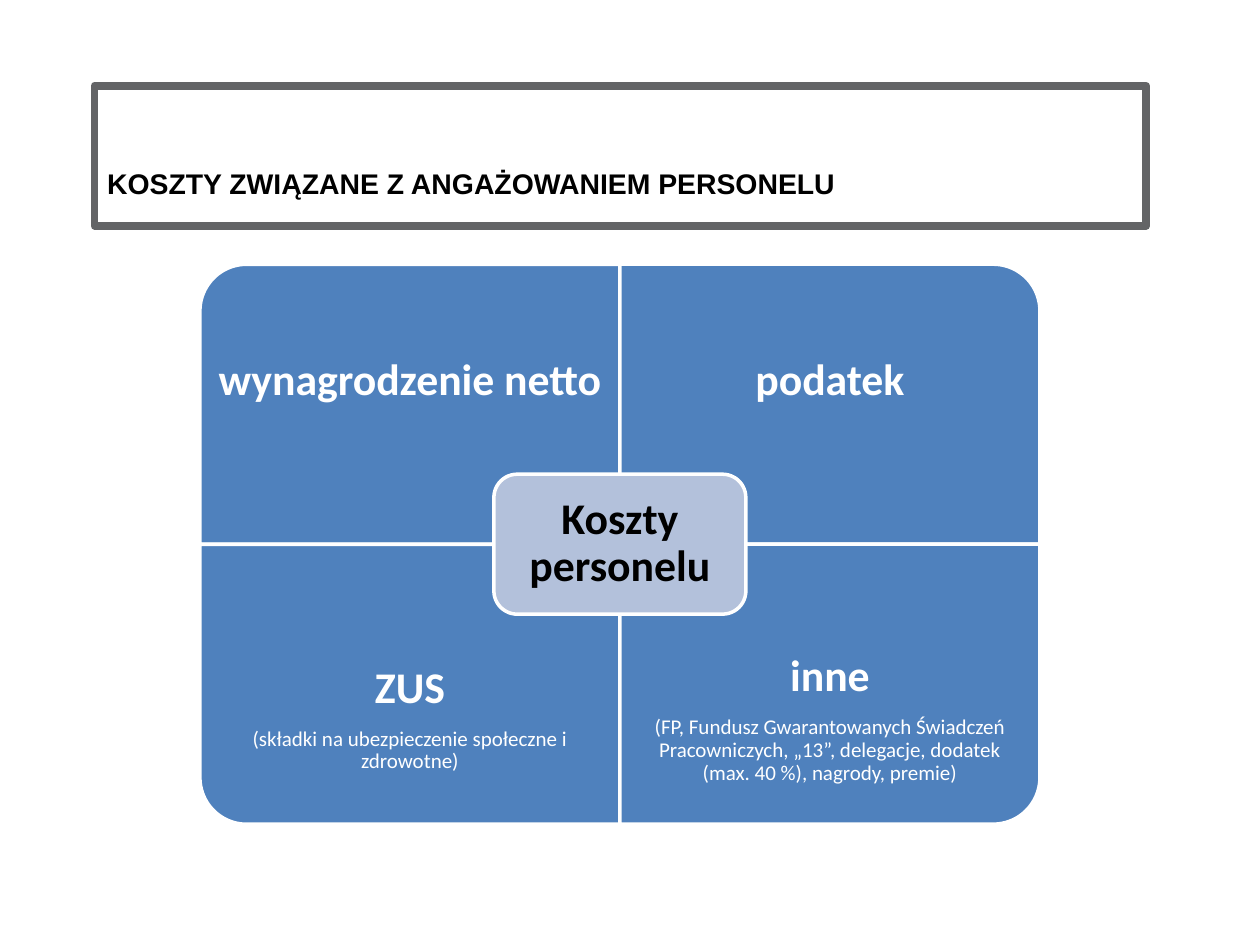
from dataclasses import dataclass

from pptx import Presentation
from pptx.dml.color import RGBColor
from pptx.enum.shapes import MSO_SHAPE
from pptx.enum.text import MSO_ANCHOR, MSO_AUTO_SIZE, PP_ALIGN
from pptx.util import Pt

ROUND = MSO_SHAPE.ROUNDED_RECTANGLE
CORNER = MSO_SHAPE.ROUND_1_RECTANGLE
MIDDLE, BOTTOM = MSO_ANCHOR.MIDDLE, MSO_ANCHOR.BOTTOM
LEFT, CENTER = PP_ALIGN.LEFT, PP_ALIGN.CENTER
FIXED = MSO_AUTO_SIZE.NONE


@dataclass(frozen=True)
class Theme:
    blue: RGBColor = RGBColor(0x4F, 0x81, 0xBD)
    pale: RGBColor = RGBColor(0xB3, 0xC1, 0xDB)
    gray: RGBColor = RGBColor(0x63, 0x64, 0x66)
    white: RGBColor = RGBColor(0xFF, 0xFF, 0xFF)
    black: RGBColor = RGBColor(0, 0, 0)
    head: str = "Arial"
    body: str = "Calibri"
    title: int = 28
    label: int = 25
    note: int = 12


THEME = Theme()

# Matrix geometry, in points
MID_X, MID_Y = 354.25, 311
CELL_W, CELL_H = 240, 160
TEXT_H = CELL_H * 3 / 4
HUB_W, HUB_H = 144, 80

# Column, row, turn, side inset, top inset, label, note
CELLS = [
    (0, 0, 270, 6, 20, "wynagrodzenie netto", ""),
    (1, 0, 0, 6, 20, "podatek", ""),
    (0, 1, 180, 13.5, 13.5, "ZUS",
     "(składki na ubezpieczenie społeczne i zdrowotne)"),
    (1, 1, 90, 13.5, 13.5, "inne",
     "(FP, Fundusz Gwarantowanych Świadczeń Pracowniczych, „13”, "
     "delegacje, dodatek (max. 40 %), nagrody, premie)"),
]


def style(font, name, size, color, bold):
    font.name = name
    font.size = Pt(size)
    font.color.rgb = color
    font.bold = bold


def add_title(slide, text):
    title = slide.shapes.title
    title.left, title.top = Pt(54), Pt(49)
    title.width, title.height = Pt(601), Pt(80)
    title.line.color.rgb = THEME.gray
    title.line.width = Pt(4.5)
    frame = title.text_frame
    frame.text = text
    frame.auto_size = FIXED
    frame.vertical_anchor = BOTTOM
    frame.margin_bottom = Pt(4)
    line = frame.paragraphs[0]
    line.alignment = LEFT
    font = line.runs[0].font
    style(font, THEME.head, THEME.title, THEME.black, True)
    # Raised text, drawn smaller than its nominal size
    line.runs[0]._r.get_or_add_rPr().set("baseline", "30000")


def add_block(slide, kind, mid_x, mid_y, width, height, fill, turn=0):
    """Add an outlined block around its centre."""
    block = slide.shapes.add_shape(
        kind, Pt(mid_x - width / 2), Pt(mid_y - height / 2),
        Pt(width), Pt(height))
    block.rotation = turn
    block.shadow.inherit = False
    block.fill.solid()
    block.fill.fore_color.rgb = fill
    block.line.color.rgb = THEME.white
    block.line.width = Pt(2)
    return block


def set_text(frame, label, note, color):
    """Write a bold label and an optional small note below it."""
    frame.word_wrap = True
    frame.vertical_anchor = MIDDLE
    frame.text = f"{label}\n{note}" if note else label
    sizes = (THEME.label, THEME.note)
    for line, size in zip(frame.paragraphs, sizes):
        line.alignment = CENTER
        line.line_spacing = 0.9
        line.space_after = Pt(size * 0.35)
        style(line.runs[0].font, THEME.body, size, color,
              size == THEME.label)


def add_cell(slide, col, row, turn, side, top, label, note):
    mid_x = MID_X + (col - 0.5) * CELL_W
    mid_y = MID_Y + (row - 0.5) * CELL_H
    # A quarter turn swaps width and height
    size = (CELL_H, CELL_W) if turn % 180 else (CELL_W, CELL_H)
    add_block(slide, CORNER, mid_x, mid_y, *size, THEME.blue, turn)

    # Text keeps to the outer three quarters, clear of the hub
    text_y = mid_y - CELL_H / 2 + row * (CELL_H - TEXT_H)
    box = slide.shapes.add_textbox(
        Pt(mid_x - CELL_W / 2), Pt(text_y), Pt(CELL_W), Pt(TEXT_H))
    frame = box.text_frame
    frame.margin_left = frame.margin_right = frame.margin_bottom = Pt(side)
    frame.margin_top = Pt(top)
    set_text(frame, label, note, THEME.white)


def add_hub(slide, label):
    hub = add_block(slide, ROUND, MID_X, MID_Y, HUB_W, HUB_H, THEME.pale)
    frame = hub.text_frame
    frame.margin_top = frame.margin_bottom = Pt(7.2)
    set_text(frame, label, "", THEME.black)


def main():
    deck = Presentation()
    deck.slide_width, deck.slide_height = Pt(720), Pt(540)
    slide = deck.slides.add_slide(deck.slide_layouts[5])

    # Title frame
    add_title(slide, "KOSZTY ZWIĄZANE Z ANGAŻOWANIEM PERSONELU")

    # Matrix of costs with its hub on top
    for cell in CELLS:
        add_cell(slide, *cell)
    add_hub(slide, "Koszty personelu")

    deck.save("out.pptx")


if __name__ == "__main__":
    main()
